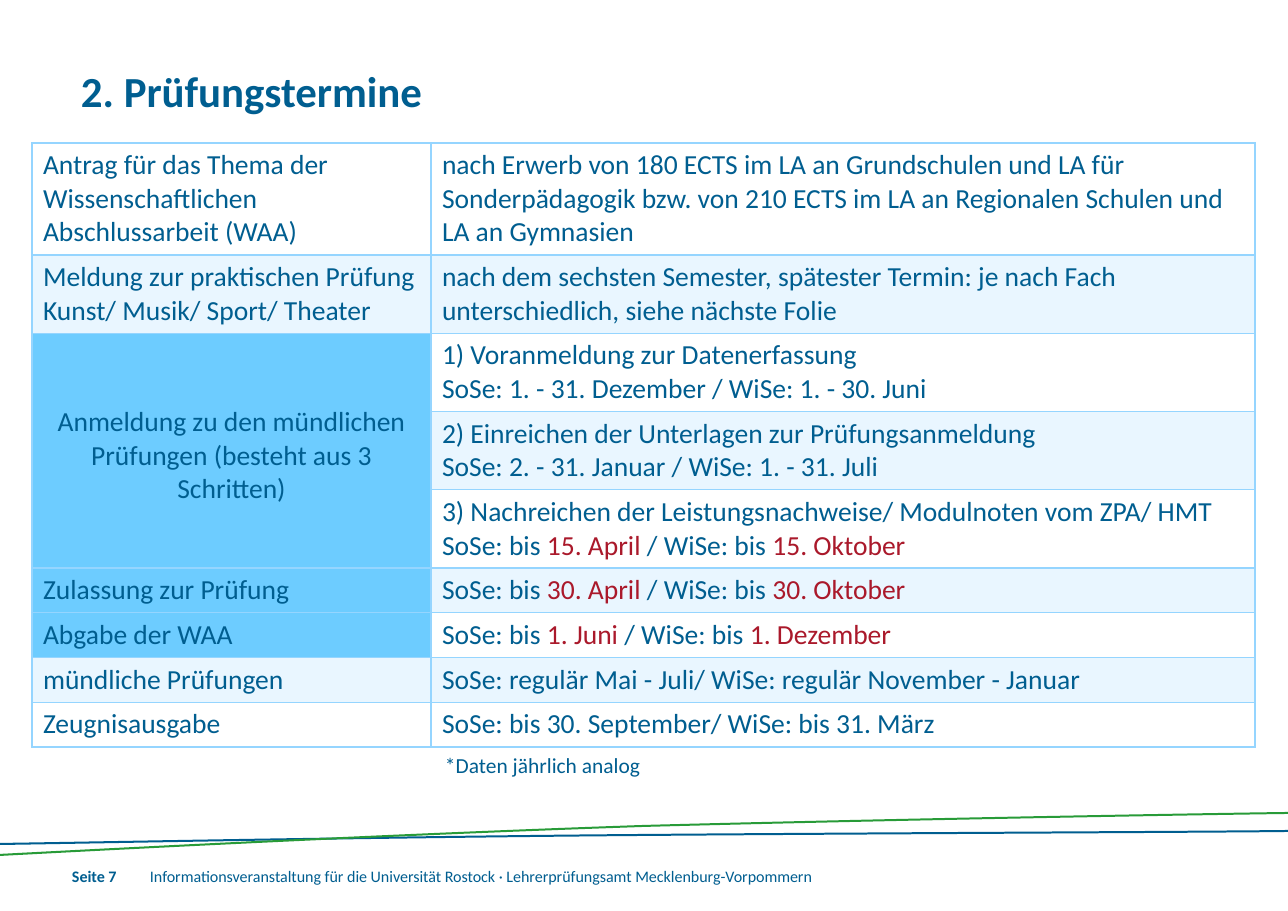
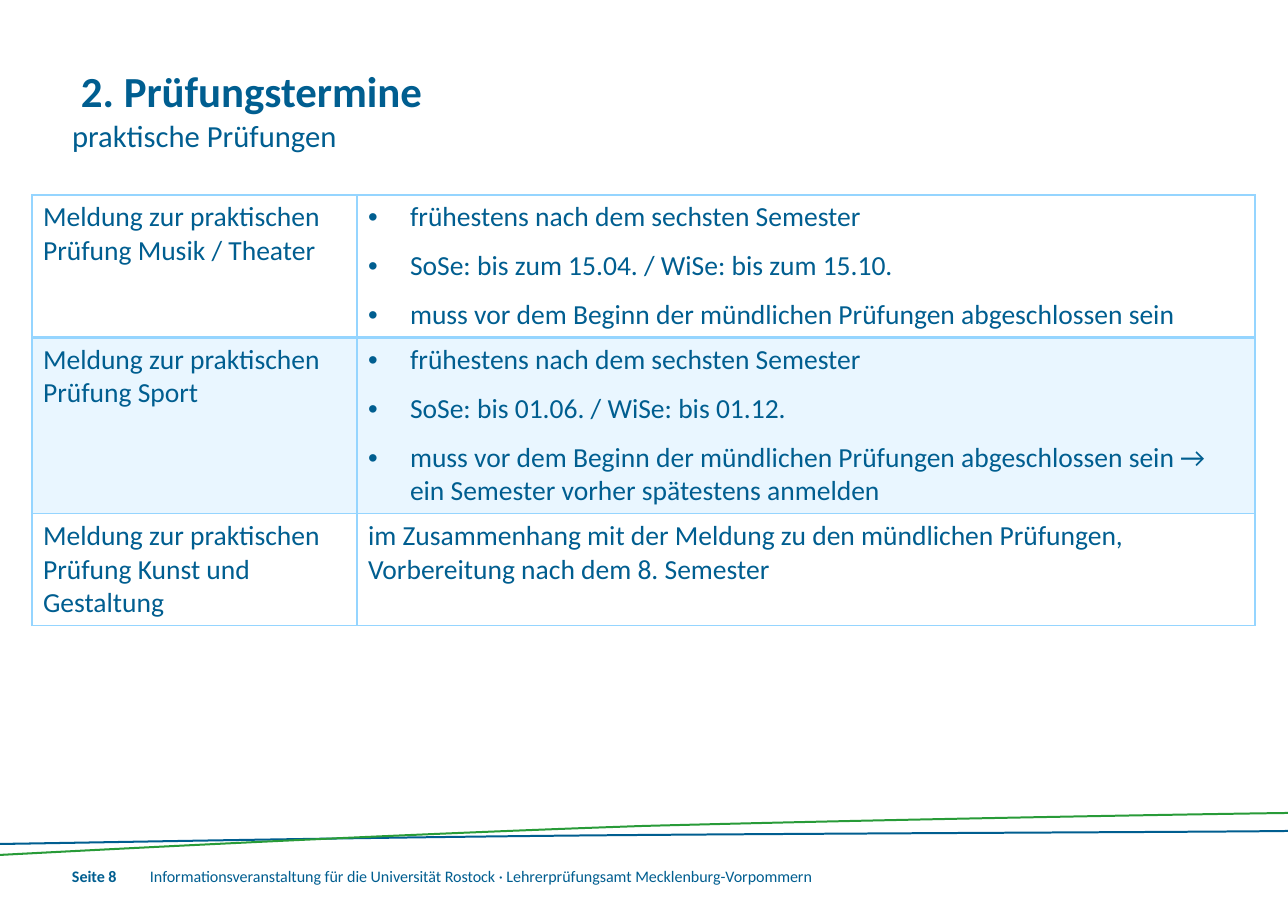
"""Two slides with the examination dates, sharing title, waves and footer."""
from lxml.etree import SubElement
from pptx import Presentation
from pptx.dml.color import RGBColor
from pptx.enum.text import MSO_ANCHOR as ANCHOR, MSO_AUTO_SIZE as AUTO, PP_ALIGN as ALIGN
from pptx.oxml.ns import qn
from pptx.util import Emu, Pt

PX = 8298
WIDTH, HEIGHT = 1288, 911
ROW_H = 44
FONT = "Calibri"
BLUE = RGBColor(0x00, 0x5E, 0x90)
GREEN = RGBColor(0x28, 0x9B, 0x38)
RED = RGBColor(0xAA, 0x19, 0x2B)
SKY = RGBColor(0x6D, 0xCC, 0xFF)
PALE = RGBColor(0x95, 0xD5, 0xFF)

TITLE = "2. Prüfungstermine"
FOOTER = "Informationsveranstaltung für die Universität Rostock · Lehrerprüfungsamt Mecklenburg-Vorpommern"
WAVE_X = (WIDTH, 1211, 909, 644, 376, 77, 0)
WAVES = [
    (BLUE, (830, 831, 832, 834, 836, 842, 843)),
    (GREEN, (812, 813, 818, 825, 834, 850, 854)),
]

SLIDES = [
    {
        "page": 7, "subtitle": "", "note": "*Daten jährlich analog",
        "top": 143, "cols": (399, 824), "height": 597,
        "sky": (2, 5, 6), "merge": (2, 4),
        "rows": [
            ("Antrag für das Thema der Wissenschaftlichen Abschlussarbeit (WAA)",
             "nach Erwerb von 180 ECTS im LA an Grundschulen und LA für Sonderpädagogik "
             "bzw. von 210 ECTS im LA an Regionalen Schulen und LA an Gymnasien"),
            ("Meldung zur praktischen Prüfung Kunst/ Musik/ Sport/ Theater",
             "nach dem sechsten Semester, spätester Termin: je nach Fach unterschiedlich, "
             "siehe nächste Folie"),
            ("Anmeldung zu den mündlichen Prüfungen (besteht aus 3 Schritten)",
             "1) Voranmeldung zur Datenerfassung\nSoSe: 1. - 31. Dezember / WiSe: 1. - 30. Juni"),
            ("", "2) Einreichen der Unterlagen zur Prüfungsanmeldung\n"
             "SoSe: 2. - 31. Januar / WiSe: 1. - 31. Juli"),
            ("", "3) Nachreichen der Leistungsnachweise/ Modulnoten vom ZPA/ HMT\n"
             "SoSe: bis |15. April |/ WiSe: bis |15. Oktober"),
            ("Zulassung zur Prüfung", "SoSe: bis |30. April |/ WiSe: bis |30. Oktober"),
            ("Abgabe der WAA", "SoSe: bis |1. Juni |/ WiSe: bis |1. Dezember"),
            ("mündliche Prüfungen", "SoSe: regulär Mai - Juli/ WiSe: regulär November - Januar"),
            ("Zeugnisausgabe", "SoSe: bis 30. September/ WiSe: bis 31. März"),
        ],
    },
    {
        "page": 8, "subtitle": "praktische Prüfungen", "note": "",
        "top": 195, "cols": (325, 898), "height": 425,
        "sky": (), "merge": (),
        "rows": [
            ("Meldung zur praktischen Prüfung Musik / Theater",
             ("frühestens nach dem sechsten Semester",
              "SoSe: bis zum 15.04. / WiSe: bis zum 15.10.",
              "muss vor dem Beginn der mündlichen Prüfungen abgeschlossen sein")),
            ("Meldung zur praktischen Prüfung Sport",
             ("frühestens nach dem sechsten Semester",
              "SoSe: bis 01.06. / WiSe: bis 01.12.",
              "muss vor dem Beginn der mündlichen Prüfungen abgeschlossen sein → "
              "ein Semester vorher spätestens anmelden")),
            ("Meldung zur praktischen Prüfung Kunst und Gestaltung",
             "im Zusammenhang mit der Meldung zu den mündlichen Prüfungen, "
             "Vorbereitung nach dem 8. Semester"),
        ],
    },
]


def px(n):
    return Emu(round(n * PX))


def add_run(p, text, size, bold=False, color=BLUE):
    r = p.add_run()
    r.text = text
    f = r.font
    f.name, f.size, f.bold, f.color.rgb = FONT, Pt(size), bold, color


def add_marked(p, text, size):
    for n, line in enumerate(text.split("\n")):
        if n:
            p.add_line_break()
        for i, part in enumerate(line.split("|")):
            add_run(p, part, size, color=RED if i % 2 else BLUE)


def prepare(tf, wrap=True):
    tf.margin_left = tf.margin_top = tf.margin_right = tf.margin_bottom = 0
    tf.word_wrap, tf.auto_size, tf.vertical_anchor = wrap, AUTO.NONE, ANCHOR.TOP
    return tf.paragraphs[0]


def add_label(s, box, text, size, bold=False, wrap=True):
    p = prepare(s.shapes.add_textbox(*map(px, box)).text_frame, wrap)
    add_run(p, text, size, bold)


def add_title(s, subtitle):
    sp = s.shapes.title
    sp.left, sp.top, sp.width, sp.height = map(px, (72, 65, 954, 117))
    p = prepare(sp.text_frame)
    p.alignment = ALIGN.LEFT
    p._p.get_or_add_pPr().set("indent", str(px(9)))
    add_run(p, TITLE, 28, True)
    if subtitle:
        p.add_line_break()
        add_run(p, subtitle, 20)


def curve_lines(lines):
    lines[0].addprevious(curve := lines[0].makeelement(qn("a:cubicBezTo")))
    for line in lines:
        curve.append(line[0])
        line.getparent().remove(line)


def add_wave(s, color, ys):
    upper = list(zip(WAVE_X, ys))
    lower = [(x, y + 2) for x, y in reversed(upper)]
    outline = [(px(x), px(y)) for x, y in upper + lower]
    fb = s.shapes.build_freeform(*outline[0], scale=1.0)
    fb.add_line_segments(outline[1:], close=True)
    sp = fb.convert_to_shape()
    lines = list(sp._element.iter(qn("a:lnTo")))
    for k in (0, 3, 7, 10):
        curve_lines(lines[k:k + 3])
    sp.shadow.inherit = False
    sp.fill.solid()
    sp.fill.fore_color.rgb = color
    sp.line.fill.background()


def set_borders(cell, top, bottom):
    tc_pr = cell._tc.get_or_add_tcPr()
    for tag, width in (("lnL", 1), ("lnR", 1), ("lnT", top), ("lnB", bottom)):
        ln = SubElement(tc_pr, qn(f"a:{tag}"), w=str(Pt(width)))
        fill = SubElement(ln, qn("a:solidFill"))
        SubElement(fill, qn("a:srgbClr"), val=str(PALE))


def set_fill(cell, sky, banded):
    if not (sky or banded):
        cell.fill.background()
        return
    cell.fill.solid()
    cell.fill.fore_color.rgb = SKY if sky else PALE
    if not sky:
        clr = cell._tc.tcPr.find(qn("a:solidFill")).find(qn("a:srgbClr"))
        SubElement(clr, qn("a:alpha"), val="20000")


def fill_text(tf, content):
    if isinstance(content, str):
        add_marked(tf.paragraphs[0], content, 18)
        return
    for i, text in enumerate(content):
        p = tf.add_paragraph() if i else tf.paragraphs[0]
        p.space_after = Pt(10)
        p_pr = p._p.get_or_add_pPr()
        p_pr.set("marL", str(px(42)))
        p_pr.set("indent", str(-px(42)))
        SubElement(p_pr, qn("a:buFont"), typeface="Arial")
        SubElement(p_pr, qn("a:buChar"), char="•")
        add_marked(p, text, 18)


def add_dates(s, d):
    cols, rows = d["cols"], d["rows"]
    box = (32, d["top"], sum(cols), d["height"])
    frame = s.shapes.add_table(len(rows), len(cols), *map(px, box))
    table = frame.table
    table.first_row = table.horz_banding = False
    for col, w in zip(table.columns, cols):
        col.width = px(w)
    for row in table.rows:
        row.height = px(ROW_H)
    frame.height = px(d["height"])
    for i, row in enumerate(rows):
        for j, content in enumerate(row):
            cell = table.cell(i, j)
            set_borders(cell, 2 if i == 1 else 1, 2 if i == 0 else 1)
            set_fill(cell, j == 0 and i in d["sky"], i % 2 == 1)
            if content:
                fill_text(cell.text_frame, content)
    if d["merge"]:
        first, last = d["merge"]
        cell = table.cell(first, 0)
        cell.merge(table.cell(last, 0))
        cell.vertical_anchor = ANCHOR.MIDDLE
        cell.margin_top = px(16)
        cell.text_frame.paragraphs[0].alignment = ALIGN.CENTER


def add_slide(prs, d):
    s = prs.slides.add_slide(prs.slide_layouts[5])
    for color, ys in WAVES:
        add_wave(s, color, ys)
    add_title(s, d["subtitle"])
    add_dates(s, d)
    if d["note"]:
        add_label(s, (445, 752, 800, 34), d["note"], 14)
    add_label(s, (72, 866, 78, 28), f"Seite {d['page']}", 10.5, True, False)
    add_label(s, (150, 866, 950, 28), FOOTER, 10.5)


def main():
    prs = Presentation()
    prs.slide_width, prs.slide_height = px(WIDTH), px(HEIGHT)
    for d in SLIDES:
        add_slide(prs, d)
    prs.save("out.pptx")


if __name__ == "__main__":
    main()
